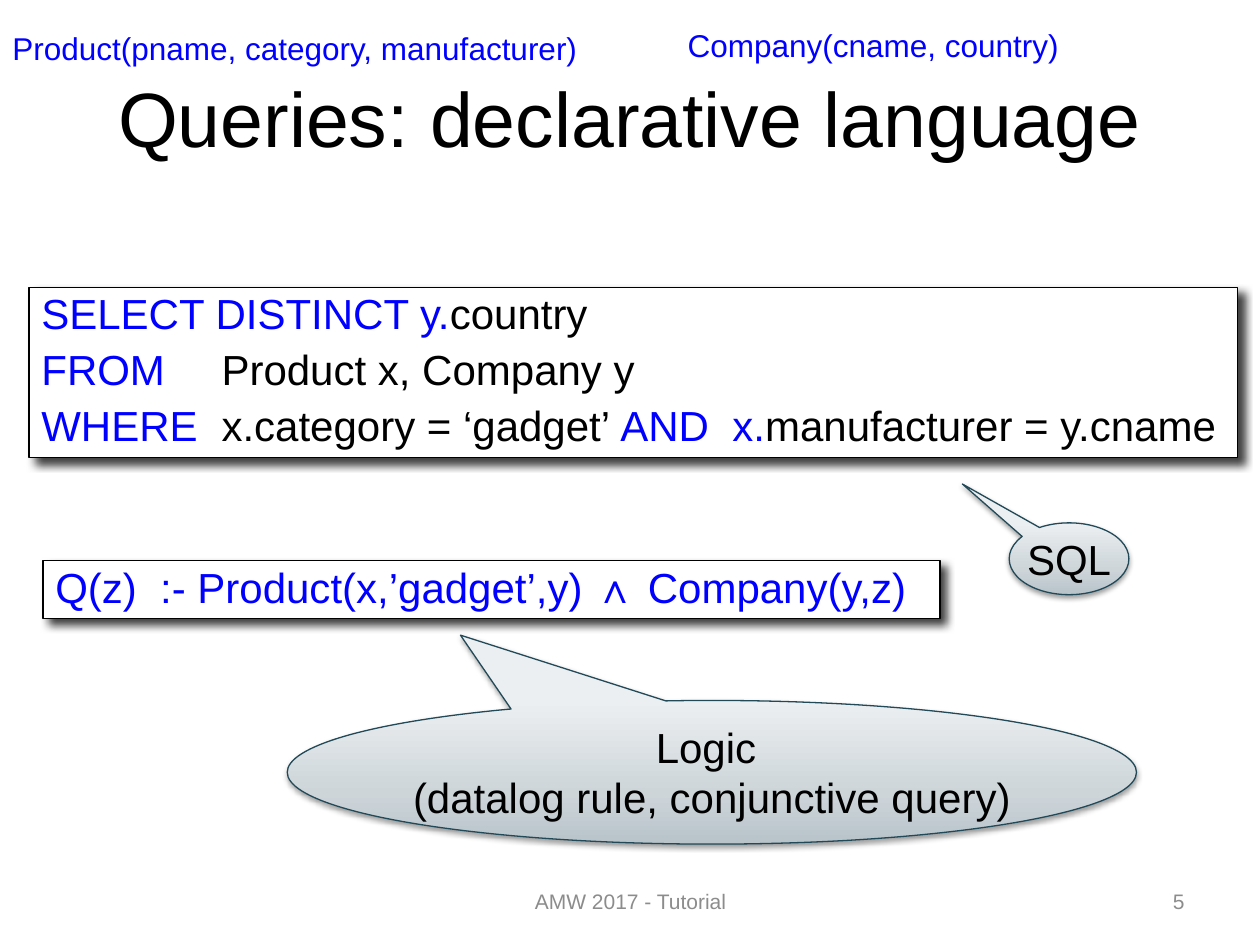
from copy import deepcopy

from lxml.etree import SubElement
from pptx import Presentation
from pptx.dml.color import RGBColor
from pptx.enum.shapes import MSO_SHAPE
from pptx.enum.text import MSO_ANCHOR, PP_ALIGN
from pptx.oxml.ns import qn
from pptx.util import Inches, Pt

COLORS = {
    "text": "000000",
    "keyword": "0000FF",
    "footer": "8C8C8C",
    "box": "FFFFFF",
    "callout_line": "224957",
}
CALLOUT_STOPS = [(0, "B8C3CA"), (0.35, "CDD5D9"), (1, "ECEFF1")]
BOX_SHADOW = {"blur": 5, "distance": 4.5, "angle": 45, "alpha": 75}
CALLOUT_SHADOW = {"blur": 3.1, "distance": 1.6, "angle": 90, "alpha": 38}
CODE_FORMAT = {"line_spacing": 0.9, "space_before": Pt(6)}
CALLOUT_FORMAT = {"alignment": PP_ALIGN.CENTER, "space_before": Pt(6)}
NO_MARGINS = dict.fromkeys(
    ("margin_left", "margin_top", "margin_right", "margin_bottom"), 0
)


def set_all(target, values):
    for name, value in values.items():
        setattr(target, name, value)


def rgb(color):
    return RGBColor.from_string(COLORS[color])


def style_runs(paragraph, size, color):
    for run in paragraph.runs:
        set_all(run.font, {"name": "Arial", "size": Pt(size)})
        run.font.color.rgb = rgb(color)


def add_shadow(shape, blur, distance, angle, alpha):
    shape.shadow.inherit = False
    effects = shape._element.spPr.find(qn("a:effectLst"))
    shadow = SubElement(
        effects, qn("a:outerShdw"), blurRad=str(Pt(blur)), dist=str(Pt(distance)),
        dir=str(angle * 60000), algn="ctr", rotWithShape="0",
    )
    color = SubElement(shadow, qn("a:srgbClr"), val=COLORS["text"])
    SubElement(color, qn("a:alpha"), val=str(alpha * 1000))


def add_outline(shape, color):
    shape.line.color.rgb = rgb(color)
    shape.line.width = Pt(0.75)


def add_title(slide, box, text):
    title = slide.shapes.title
    set_all(title, dict(zip(("left", "top", "width", "height"), map(Inches, box))))
    title.text_frame.text = text
    title.text_frame.vertical_anchor = MSO_ANCHOR.MIDDLE
    heading = title.text_frame.paragraphs[0]
    heading.alignment = PP_ALIGN.CENTER
    style_runs(heading, 44, "text")


def add_label(slide, box, text, size, color, wrap=True, **paragraph_format):
    frame = slide.shapes.add_textbox(*map(Inches, box)).text_frame
    set_all(frame, {"word_wrap": wrap, "vertical_anchor": MSO_ANCHOR.MIDDLE})
    label = frame.paragraphs[0]
    label.text = text
    set_all(label, paragraph_format)
    style_runs(label, size, color)


def add_code_box(slide, box, lines, tab=1.43):
    code_box = slide.shapes.add_shape(MSO_SHAPE.RECTANGLE, *map(Inches, box))
    code_box.fill.solid()
    code_box.fill.fore_color.rgb = rgb("box")
    add_outline(code_box, "text")
    add_shadow(code_box, **BOX_SHADOW)
    frame = code_box.text_frame
    set_all(frame, {"word_wrap": False, "vertical_anchor": MSO_ANCHOR.TOP})
    for index, line in enumerate(lines):
        statement = frame.add_paragraph() if index else frame.paragraphs[0]
        set_all(statement, {"alignment": PP_ALIGN.LEFT, **CODE_FORMAT})
        tabs = SubElement(statement._p.get_or_add_pPr(), qn("a:tabLst"))
        SubElement(tabs, qn("a:tab"), pos=str(Inches(tab)), algn="l")
        for position, part in enumerate(line):
            run = statement.add_run()
            run.text = part
            set_all(run.font, {"name": "Arial", "size": Pt(24)})
            run.font.color.rgb = rgb("text" if position % 2 else "keyword")


def add_callout(slide, box, tip, text):
    callout = slide.shapes.add_shape(MSO_SHAPE.OVAL_CALLOUT, *map(Inches, box))
    for index, offset in enumerate(tip):
        callout.adjustments[index] = offset
    callout.fill.gradient()
    callout.fill.gradient_angle = 90
    stop_list = callout._element.spPr.find(".//" + qn("a:gsLst"))
    stop_list.append(deepcopy(stop_list[-1]))
    for stop, (position, color) in zip(callout.fill.gradient_stops, CALLOUT_STOPS):
        stop.position = position
        stop.color.rgb = RGBColor.from_string(color)
    add_outline(callout, "callout_line")
    add_shadow(callout, **CALLOUT_SHADOW)
    frame = callout.text_frame
    set_all(frame, {"word_wrap": False, "vertical_anchor": MSO_ANCHOR.TOP, **NO_MARGINS})
    caption = frame.paragraphs[0]
    caption.text = text
    set_all(caption, CALLOUT_FORMAT)
    style_runs(caption, 24, "text")


def main():
    presentation = Presentation()
    set_all(presentation, {"slide_width": Inches(10), "slide_height": Inches(7.5)})
    slide = presentation.slides.add_slide(presentation.slide_layouts[5])

    add_title(slide, (0.5, 0.3, 9, 1.25), "Queries: declarative language")
    add_label(slide, (3.42, 6.95, 3.17, 0.4), "AMW 2017 - Tutorial", 12, "footer",
              alignment=PP_ALIGN.CENTER)
    add_label(slide, (7.17, 6.95, 2.33, 0.4), "5", 12, "footer",
              alignment=PP_ALIGN.RIGHT)
    add_code_box(slide, (0.23, 2.28, 9.59, 1.35), [
        ("SELECT DISTINCT y.", "country"),
        ("FROM\t", "Product x, Company y"),
        ("WHERE\t", "x.category = ‘gadget’ ", "AND  x.", "manufacturer = y.cname"),
    ])
    add_label(slide, (0, 0.18, 4.73, 0.4), "Product(pname, category, manufacturer)",
              18, "keyword", wrap=False)
    add_label(slide, (5.36, 0.16, 3.18, 0.4), "Company(cname, country)",
              18, "keyword", wrap=False)
    add_code_box(slide, (0.34, 4.45, 7.12, 0.46),
                 [("Q(z)  :- Product(x,’gadget’,y) ∧ Company(y,z)",)])
    add_callout(slide, (8.01, 4.15, 0.95, 0.57), (-0.892, -1.041), "SQL")
    add_callout(slide, (2.28, 5.56, 6.74, 1.14), (-0.296, -0.955),
                "Logic \v(datalog rule, conjunctive query)")

    presentation.save("out.pptx")


if __name__ == "__main__":
    main()
